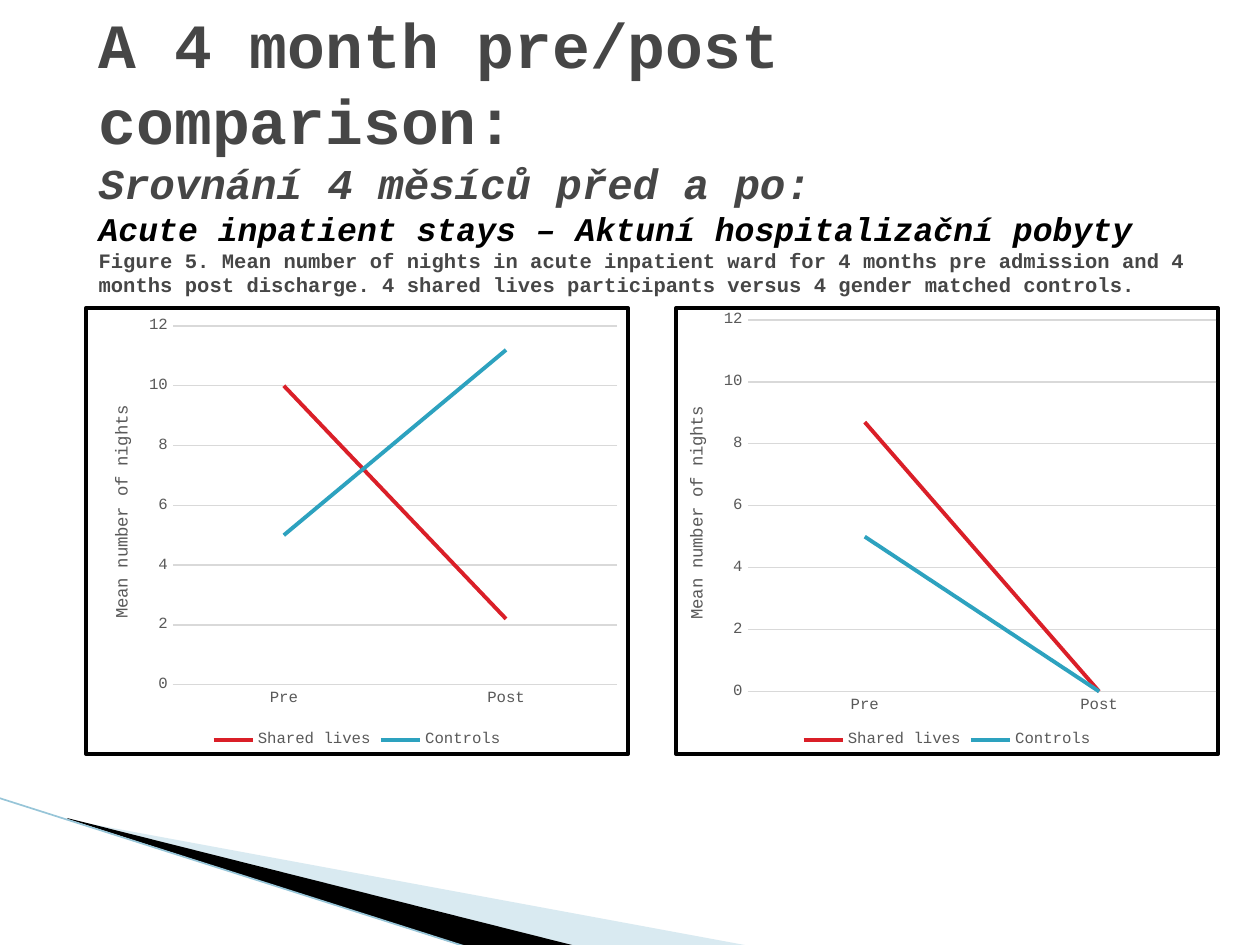
"""Build the slide that compares nights in an acute ward before and after."""
from pptx import Presentation
from pptx.chart.data import CategoryChartData
from pptx.dml.color import RGBColor
from pptx.enum.chart import XL_CHART_TYPE, XL_LEGEND_POSITION, XL_TICK_MARK
from pptx.enum.shapes import MSO_CONNECTOR
from pptx.enum.text import MSO_ANCHOR, MSO_AUTO_SIZE, PP_ALIGN
from pptx.oxml import parse_xml
from pptx.oxml.ns import nsdecls, qn
from pptx.util import Pt

PX = 914400 / 126
FACE = "Courier New"
GREY, DARK, PALE = "595959", "464646", "D9D9D9"


def tint(part, code):
    fill = part.fill if hasattr(part, "fill") else part
    fill.solid()
    fill.fore_color.rgb = RGBColor.from_string(code)


def style(item, **vals):
    for key, val in vals.items():
        setattr(item, key, val)


deck = Presentation()
style(deck, slide_width=int(1260 * PX), slide_height=int(945 * PX))
slide = deck.slides.add_slide(deck.slide_layouts[5])
shapes = slide.shapes

wedges = [
    ([(69, 820), (750, 946), (575, 946), (69, 819)], "A0CBDC", 40),
    ([(67, 818), (576, 946), (469, 948), (68, 819)], "000000", 100),
]
for points, code, alpha in wedges:
    pen = shapes.build_freeform(*points[0], scale=PX)
    pen.add_line_segments(points[1:])
    wedge = pen.convert_to_shape()
    wedge.shadow.inherit = False
    wedge.line.fill.background()
    tint(wedge.fill, code)
    if alpha < 100:
        fill = wedge.element.spPr.find(qn("a:solidFill"))
        fill[0].append(parse_xml(f'<a:alpha {nsdecls("a")} val="{alpha * 1000}"/>'))

ends = [int(n * PX) for n in (-1, 798, 467, 947)]
edge = shapes.add_connector(MSO_CONNECTOR.STRAIGHT, *ends)
tint(edge.line, "97C5D8")
edge.line.width = Pt(0.95)
edge.element.spPr.append(parse_xml(f'<a:effectLst {nsdecls("a")}/>'))

title = shapes.title
style(title, left=int(86 * PX), top=int(73 * PX),
      width=int(1134 * PX), height=int(157 * PX))
frame = title.text_frame
style(frame, word_wrap=True, auto_size=MSO_AUTO_SIZE.NONE,
      vertical_anchor=MSO_ANCHOR.MIDDLE)
lines = [
    ("A 4 month pre/post comparison:", 36, DARK, False),
    ("Srovnání 4 měsíců před a po:", 24.3, DARK, True),
    ("Acute inpatient stays – Aktuní hospitalizační pobyty", 18.9, "000000", True),
    ("Figure 5. Mean number of nights in acute inpatient ward for 4 months pre "
     "admission and 4 months post discharge. 4 shared lives participants versus "
     "4 gender matched controls.", 11.7, DARK, False),
]
for i, (text, size, code, slant) in enumerate(lines):
    para = frame.add_paragraph() if i else frame.paragraphs[0]
    para.alignment = PP_ALIGN.LEFT
    run = para.add_run()
    run.text = text
    style(run.font, name=FACE, size=Pt(size), bold=True, italic=slant)
    tint(run.font, code)

border = (f'<c:spPr {nsdecls("c", "a")}><a:noFill/><a:ln w="28575"><a:solidFill>'
          '<a:srgbClr val="000000"/></a:solidFill></a:ln></c:spPr>')
charts = [
    (84, [10, 2.2], [5, 11.2], None),
    (674, [8.7, 0], [5, 0], {"x": 0.132, "y": 0.027, "w": 0.865, "h": 0.833}),
]
for left, shared, control, inner in charts:
    data = CategoryChartData()
    data.categories = ["Pre", "Post"]
    data.add_series("Shared lives", shared)
    data.add_series("Controls", control)
    box = [int(n * PX) for n in (left, 306, 546, 450)]
    chart = shapes.add_chart(XL_CHART_TYPE.LINE, *box, data).chart
    style(chart, has_title=False, has_legend=True)
    style(chart.font, name=FACE, size=Pt(10))
    tint(chart.font, "000000")
    style(chart.legend, position=XL_LEGEND_POSITION.BOTTOM, include_in_layout=False)

    cats, vals = chart.category_axis, chart.value_axis
    style(vals, minimum_scale=0, maximum_scale=12, major_unit=2,
          has_major_gridlines=True)
    for axis in (cats, vals):
        style(axis, major_tick_mark=XL_TICK_MARK.NONE,
              minor_tick_mark=XL_TICK_MARK.NONE)
    for font in (cats.tick_labels.font, vals.tick_labels.font, chart.legend.font):
        style(font, name=FACE, size=Pt(9))
        tint(font, GREY)
    for line in (cats.format.line, vals.major_gridlines.format.line):
        tint(line, PALE)
        line.width = Pt(0.75)
    vals.format.line.fill.background()
    label = vals.axis_title.text_frame
    label.text = "Mean number of nights"
    font = label.paragraphs[0].runs[0].font
    style(font, name=FACE, size=Pt(10), bold=False)
    tint(font, GREY)

    for series, code in zip(chart.plots[0].series, ("DA1F28", "2DA2BF")):
        series.smooth = False
        tint(series.format.line, code)
        series.format.line.width = Pt(2.25)

    root = chart.element.find(qn("c:chart"))
    root.addnext(parse_xml(border))
    if inner:
        area = root.find(qn("c:plotArea"))
        for old in area.findall(qn("c:layout")):
            area.remove(old)
        spots = "".join(f'<c:{key} val="{val}"/>' for key, val in inner.items())
        area.insert(0, parse_xml(
            f'<c:layout {nsdecls("c")}><c:manualLayout><c:layoutTarget val="inner"/>'
            '<c:xMode val="edge"/><c:yMode val="edge"/>'
            f'{spots}</c:manualLayout></c:layout>'))

deck.save("out.pptx")
